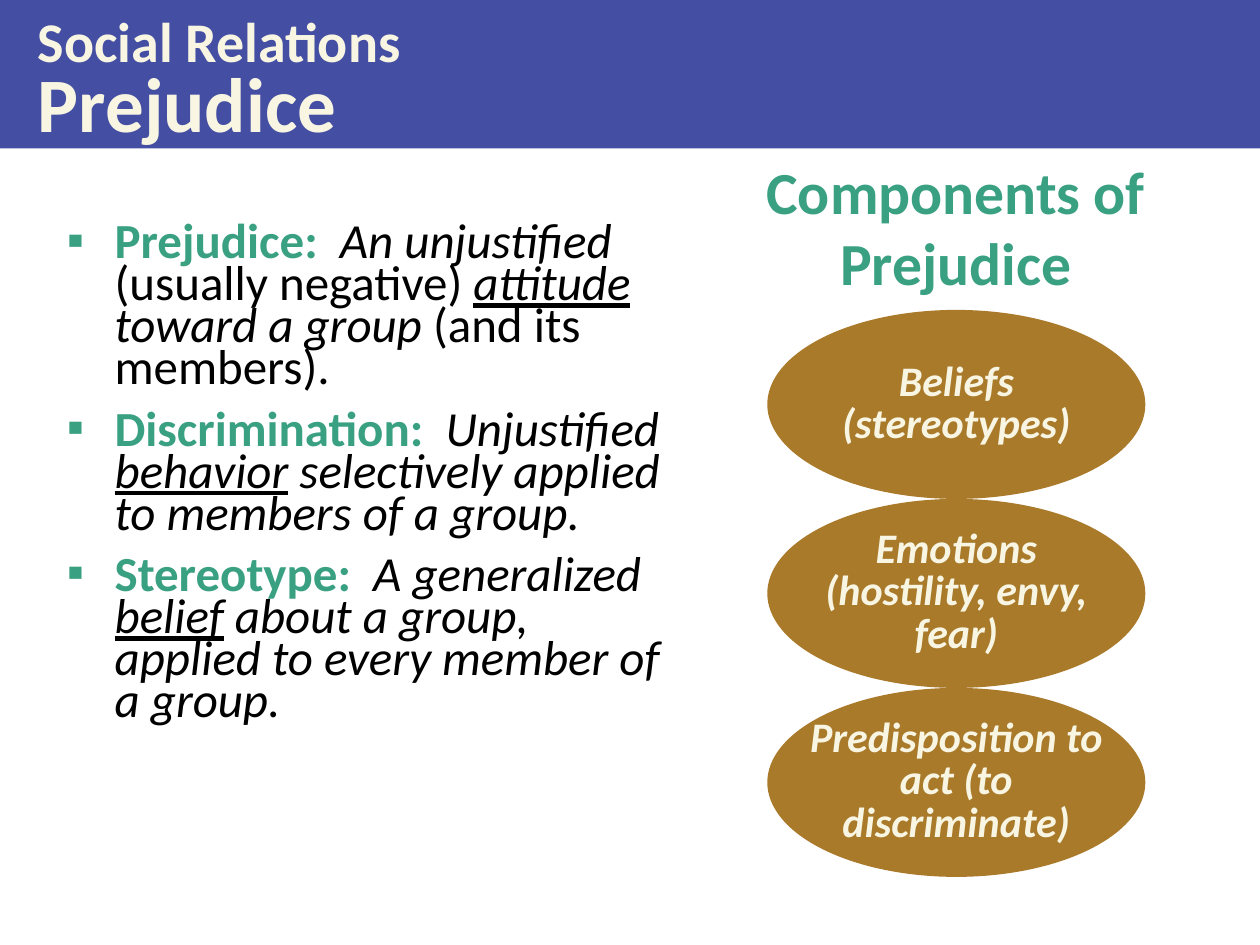
import pptx
import pptx.util
import pptx.dml.color
import pptx.enum.shapes
import pptx.enum.text
import pptx.oxml.ns
import lxml.etree

Pt, Inches = pptx.util.Pt, pptx.util.Inches
ALIGN = pptx.enum.text.PP_ALIGN
MIDDLE = pptx.enum.text.MSO_ANCHOR.MIDDLE
HEX = {"band": "444EA2", "cream": "F8F6E3", "green": "3AA082",
       "black": "000000", "gold": "AA7A2B"}
TERM = {"bold": True, "color": "green"}
PLAIN = {"bold": False, "color": "black"}
SLANT = {**PLAIN, "italic": True}
KEY = {**SLANT, "underline": True}


def rgb(name):
    return pptx.dml.color.RGBColor.from_string(HEX[name])


def add_run(para, text, size, color, **format):
    run = para.add_run()
    run.text = text
    run.font.name = "Calibri"
    run.font.size = Pt(size)
    run.font.color.rgb = rgb(color)
    for name, value in format.items():
        setattr(run.font, name, value)


deck = pptx.Presentation()
deck.slide_width, deck.slide_height = Inches(10), Inches(7.5)
wide, high = deck.slide_width, deck.slide_height
slide = deck.slides.add_slide(deck.slide_layouts[1])
title, body = slide.shapes.title, slide.placeholders[1]
head = slide.shapes.add_textbox(0, 0, 1, 1)

# Places as shares of the slide: left, top, width, height
for shape, (x, y, w, h) in (
    (title, (0, 0, 1, 0.157)),
    (body, (0.043, 0.233, 0.501, 0.697)),
    (head, (0.567, 0.168, 0.383, 0.143)),
):
    shape.left, shape.top = int(x * wide), int(y * high)
    shape.width, shape.height = int(w * wide), int(h * high)
    shape.text_frame.word_wrap = True
    shape.text_frame.auto_size = pptx.enum.text.MSO_AUTO_SIZE.NONE

# Title band
title.fill.solid()
title.fill.fore_color.rgb = rgb("band")
title.text_frame.margin_left = Inches(0.3)
title.text_frame.vertical_anchor = MIDDLE
para = title.text_frame.paragraphs[0]
para.alignment, para.line_spacing = ALIGN.LEFT, Pt(42)
add_run(para, "Social Relations", 32, "cream", bold=True)
para.add_line_break()
add_run(para, "Prejudice", 44, "cream", bold=True)

# Definitions
terms = [
    [("Prejudice:  ", TERM), ("An unjustified", SLANT),
     (" (usually negative) ", PLAIN), ("attitude", KEY),
     (" toward a group", SLANT), (" (and its members).", PLAIN)],
    [("Discrimination:  ", TERM), ("Unjustified ", SLANT), ("behavior", KEY),
     (" selectively applied to members of a group.", SLANT)],
    [("Stereotype:  ", TERM), ("A generalized ", SLANT), ("belief", KEY),
     (" about a group, applied to every member of a group.", SLANT)],
]
for row, parts in enumerate(terms):
    frame = body.text_frame
    para = frame.add_paragraph() if row else frame.paragraphs[0]
    format = {"line_spacing": Pt(24), "space_before": Pt(5), "space_after": Pt(6)}
    for name, value in format.items():
        setattr(para, name, value)
    props = para._p.get_or_add_pPr()
    props.set("marL", str(Inches(0.38)))
    props.set("indent", str(-Inches(0.38)))
    mark = lxml.etree.SubElement(props, pptx.oxml.ns.qn("a:buChar"))
    mark.set("char", "▪")
    for text, style in parts:
        add_run(para, text, 28, **style)

# Heading over the ovals
head.text_frame.vertical_anchor = MIDDLE
para = head.text_frame.paragraphs[0]
para.alignment = ALIGN.CENTER
add_run(para, "Components of Prejudice", 34.1, "green", bold=True)

# Stack of ovals, each a fifth of the slide high
oval_w, oval_h = 0.3 * wide, high / 5
labels = ["Beliefs (stereotypes)", "Emotions (hostility, envy, fear)",
          "Predisposition to act (to discriminate)"]
for row, label in enumerate(labels):
    oval = slide.shapes.add_shape(
        pptx.enum.shapes.MSO_SHAPE.OVAL, int(0.609 * wide),
        int(0.328 * high + row * oval_h), int(oval_w), int(oval_h))
    oval.shadow.inherit = False
    oval.fill.solid()
    oval.fill.fore_color.rgb = rgb("gold")
    oval.line.fill.background()
    # Negative side margins widen the oval's narrow text area
    format = {"word_wrap": True, "vertical_anchor": MIDDLE,
              "margin_left": Inches(-0.25), "margin_right": Inches(-0.25),
              "margin_top": 0, "margin_bottom": 0}
    for name, value in format.items():
        setattr(oval.text_frame, name, value)
    para = oval.text_frame.paragraphs[0]
    para.alignment, para.line_spacing = ALIGN.CENTER, Pt(24)
    para.space_after = Pt(8.4)
    add_run(para, label, 24, "cream", bold=True, italic=True)

deck.save("out.pptx")
